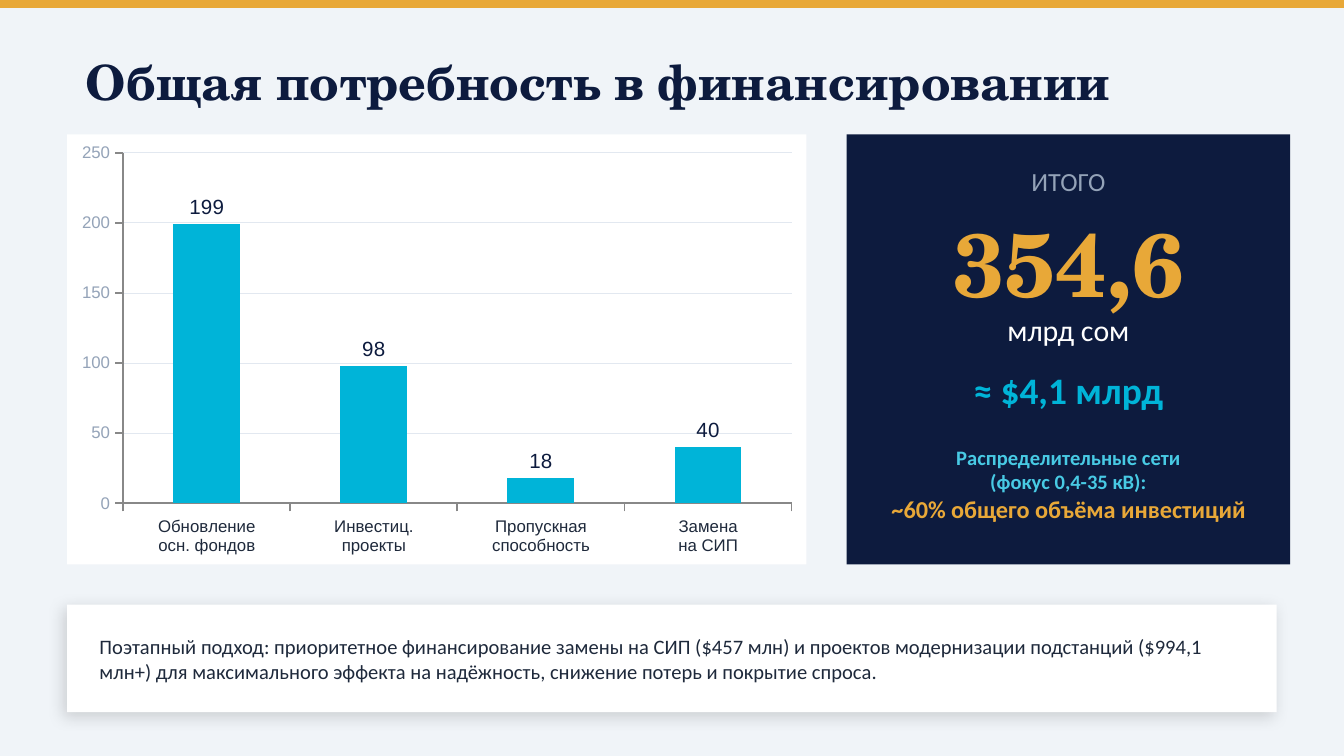
from dataclasses import dataclass

from lxml import etree
from pptx import Presentation
from pptx import util as u
from pptx.chart import data as cd
from pptx.dml import color
from pptx.enum import chart as ch
from pptx.enum import shapes, text
from pptx.oxml import parse_xml
from pptx.oxml.ns import nsdecls, qn

PX = 9144


@dataclass(frozen=True)
class Theme:
    bg: str = "F0F4F8"
    navy: str = "0D1B3E"
    gold: str = "E8A838"
    cyan: str = "00B4D8"
    sky: str = "48CAE4"
    white: str = "FFFFFF"
    black: str = "000000"
    ink: str = "1E293B"
    muted: str = "94A3B8"
    axis: str = "888888"
    grid: str = "E2E8F0"
    head: str = "TeX Gyre Schola"
    body: str = "Calibri"
    chart: str = "Arial"
    title: int = 26
    total: int = 48
    amount: int = 20
    unit: int = 16
    label: int = 14
    share: int = 13
    note: int = 11
    base: int = 10
    tick: int = 9


T = Theme()


def rgb(value):
    return color.RGBColor.from_string(value)


def set_font(f, size, fill, name=T.body, bold=False):
    f.size, f.name, f.bold = u.Pt(size), name, bold
    f.color.rgb = rgb(fill)


def add_rect(s, box, fill):
    sp = s.shapes.add_shape(shapes.MSO_SHAPE.RECTANGLE, *(v * PX for v in box))
    sp.shadow.inherit = False
    sp.fill.solid()
    sp.fill.fore_color.rgb = rgb(fill)
    sp.line.fill.background()
    return sp


def add_text(s, box, lines, align=text.PP_ALIGN.LEFT, inset=(4, 4)):
    tf = s.shapes.add_textbox(*(v * PX for v in box)).text_frame
    tf.word_wrap = True
    tf.vertical_anchor = text.MSO_ANCHOR.MIDDLE
    tf.margin_left = tf.margin_right = inset[0] * PX
    tf.margin_top = tf.margin_bottom = inset[1] * PX
    tf.text = "\n".join(line[0] for line in lines)
    for p, (_, *style) in zip(tf.paragraphs, lines):
        p.alignment = align
        set_font(p.runs[0].font, *style)


def add_header(s, box):
    x, y, w, h = box
    add_rect(s, (x, y, w, 6), T.gold)
    add_text(s, (x + 60, y + 30, w - 120, h - 30),
             [("Общая потребность в финансировании", T.title, T.navy, T.head, True)])


def style_axis(axis, fill):
    axis.major_tick_mark = ch.XL_TICK_MARK.OUTSIDE
    axis.minor_tick_mark = ch.XL_TICK_MARK.NONE
    set_font(axis.tick_labels.font, T.tick, fill, T.chart)
    axis.format.line.width = u.Pt(1)
    axis.format.line.color.rgb = rgb(T.axis)


def add_needs_chart(s, box):
    data = cd.CategoryChartData()
    data.categories = ["Обновление\nосн. фондов", "Инвестиц.\nпроекты",
                       "Пропускная\nспособность", "Замена\nна СИП"]
    data.add_series("Series 1", (199, 98, 18, 40))
    chart = s.shapes.add_chart(ch.XL_CHART_TYPE.COLUMN_CLUSTERED,
                               *(v * PX for v in box), data).chart
    chart.has_legend = chart.has_title = False
    set_font(chart.font, T.base, T.black)
    chart.element.find(qn("c:txPr")).addprevious(parse_xml(
        f'<c:spPr {nsdecls("c", "a")}><a:solidFill><a:srgbClr val="{T.white}"/>'
        '</a:solidFill><a:ln><a:noFill/></a:ln></c:spPr>'))

    style_axis(chart.category_axis, T.ink)
    axis = chart.value_axis
    style_axis(axis, T.muted)
    axis.tick_labels.number_format = "General"
    axis.tick_labels.number_format_is_linked = False
    axis.has_major_gridlines = True
    grid = axis.major_gridlines.format.line
    grid.width = u.Pt(0.5)
    grid.color.rgb = rgb(T.grid)

    plot = chart.plots[0]
    plot.gap_width = 150
    plot.vary_by_categories = False
    series = plot.series[0]
    series.format.fill.solid()
    series.format.fill.fore_color.rgb = rgb(T.cyan)
    labels = series.data_labels
    labels.show_value = True
    labels.number_format = "#,##0"
    labels.number_format_is_linked = False
    labels.position = ch.XL_LABEL_POSITION.OUTSIDE_END
    set_font(labels.font, T.note, T.navy, T.chart)


def add_total_panel(s, box):
    x, y, w, h = box
    add_rect(s, box, T.navy)
    rows = [
        (20, 30, ("ИТОГО", T.label, T.muted)),
        (60, 70, ("354,6", T.total, T.gold, T.head, True)),
        (130, 30, ("млрд сом", T.unit, T.white)),
        (170, 40, ("≈ $4,1 млрд", T.amount, T.cyan, T.body, True)),
    ]
    for top, height, line in rows:
        add_text(s, (x, y + top, w, height), [line], text.PP_ALIGN.CENTER)
    add_text(s, (x + 20, y + 220, w - 40, 80), [
        ("Распределительные сети", T.note, T.sky, T.body, True),
        ("(фокус 0,4-35 кВ):", T.note, T.sky, T.body, True),
        ("~60% общего объёма инвестиций", T.share, T.gold, T.body, True),
    ], text.PP_ALIGN.CENTER, inset=(10, 5))


def add_note(s, box):
    x, y, w, h = box
    sp = add_rect(s, box, T.white)
    effects = sp.element.spPr.find(qn("a:effectLst"))
    shadow = etree.SubElement(effects, qn("a:outerShdw"), blurRad=str(u.Pt(8)),
                              dist=str(u.Pt(3)), dir=str(135 * 60000),
                              algn="bl", rotWithShape="0")
    tint = etree.SubElement(shadow, qn("a:srgbClr"), val=T.black)
    etree.SubElement(tint, qn("a:alpha"), val="15000")
    add_text(s, (x + 20, y + 5, w - 40, h - 10), [(
        "Поэтапный подход: приоритетное финансирование замены на СИП ($457 млн) "
        "и проектов модернизации подстанций ($994,1 млн+) для максимального эффекта "
        "на надёжность, снижение потерь и покрытие спроса.", T.note, T.ink)])


def main():
    prs = Presentation()
    prs.slide_width = 1000 * PX
    prs.slide_height = prs.slide_width * 9 // 16
    s = prs.slides.add_slide(prs.slide_layouts[6])
    s.background.fill.solid()
    s.background.fill.fore_color.rgb = rgb(T.bg)
    add_header(s, (0, 0, 1000, 90))
    add_needs_chart(s, (50, 100, 550, 320))
    add_total_panel(s, (630, 100, 330, 320))
    add_note(s, (50, 450, 900, 80))
    prs.save("out.pptx")


if __name__ == "__main__":
    main()
